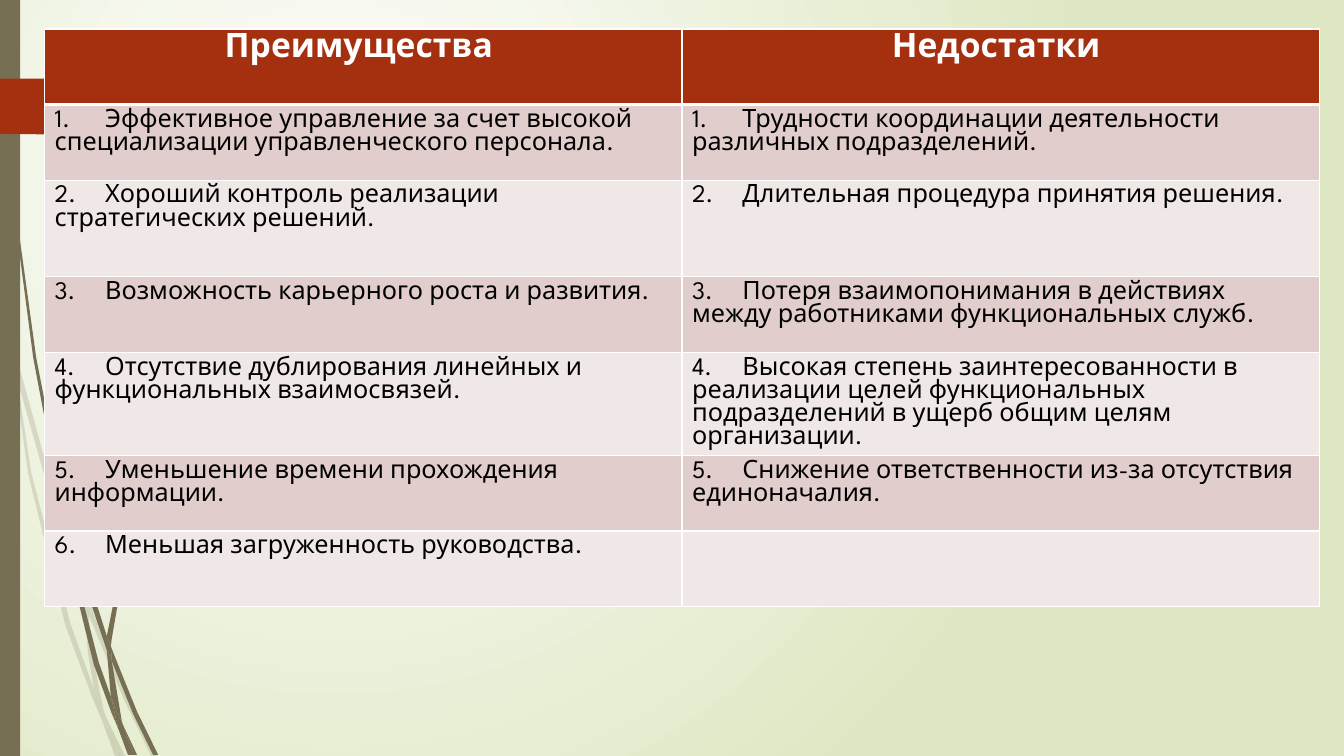
from dataclasses import dataclass

from pptx import Presentation
from pptx.dml.color import RGBColor
from pptx.enum.shapes import MSO_SHAPE
from pptx.enum.text import PP_ALIGN
from pptx.oxml.ns import qn
from pptx.util import Pt
from lxml.etree import SubElement


@dataclass(frozen=True)
class Theme:
    font: str = "League Spartan"
    header_size: float = 24
    body_size: float = 18
    accent: str = "A53010"
    stem: str = "766F54"
    white: str = "FFFFFF"
    black: str = "000000"
    meadow: str = "DFE8C4"
    bands: tuple = ("E1CDCC", "F0E8E7")


# Outline knots in steps of 0.72 pt
STEP = Pt(0.72)
PALE_WISPS = [
    [(11, 350), (9, 322), (0, 282), (0, 299), (10, 344)],
    [(58, 522), (84, 599), (85, 586), (62, 520), (14, 345), (17, 376)],
    [(92, 607), (88, 596), (88, 610), (123, 694), (150, 750), (155, 750),
     (127, 692)],
    [(119, 750), (124, 750), (105, 711)],
    [(93, 683), (70, 619), (31, 469), (17, 376), (11, 350), (28, 470),
     (65, 621), (92, 693), (101, 714), (99, 707)],
    [(84, 599), (87, 646), (93, 683), (96, 692), (105, 711), (103, 706),
     (91, 646), (88, 610), (88, 608)],
    [(88, 584), (110, 462), (160, 349), (229, 245), (268, 198), (290, 175),
     (312, 154), (312, 153), (289, 175), (268, 197), (228, 244), (158, 348),
     (107, 461), (85, 584), (85, 586), (88, 596)],
    [(101, 714), (114, 750), (119, 750)],
    [(88, 608), (88, 610), (88, 596), (85, 586), (84, 599)],
    [(96, 692), (93, 683), (99, 707), (101, 714), (119, 750), (105, 711)],
]
DARK_WISPS = [
    [(7, 110), (17, 233), (33, 355), (56, 477), (57, 481), (55, 457),
     (55, 453), (36, 355), (19, 232), (8, 109), (5, 48), (4, 0), (3, 0),
     (4, 48)],
    [(88, 592), (106, 645), (106, 631), (93, 590), (60, 472), (64, 505)],
    [(113, 649), (110, 641), (111, 656), (132, 708), (152, 749), (157, 749),
     (136, 706)],
    [(110, 691), (98, 657), (72, 556), (64, 505), (57, 477), (68, 557),
     (93, 659), (111, 708), (117, 722), (116, 717)],
    [(60, 472), (58, 453), (54, 349), (58, 245), (63, 193), (70, 141),
     (62, 193), (56, 245), (52, 349), (55, 449)],
    [(133, 749), (136, 749), (122, 719)],
    [(57, 477), (64, 505), (60, 472), (55, 449), (55, 453)],
    [(111, 633), (125, 552), (158, 476), (205, 406), (231, 374), (245, 359),
     (261, 344), (260, 344), (245, 358), (231, 373), (204, 405), (156, 474),
     (122, 551), (106, 631), (110, 641)],
    [(117, 722), (127, 749), (131, 749)],
    [(106, 645), (110, 691), (116, 706), (122, 719), (121, 716), (111, 656),
     (109, 651)],
    [(106, 645), (109, 651), (111, 656), (110, 641), (106, 631)],
    [(116, 706), (110, 691), (116, 717), (117, 722), (130, 749), (133, 749),
     (122, 719)],
]
PAGE_TAG = [(173, 108), (148, 133), (146, 134), (136, 134), (0, 133), (0, 78),
            (136, 78), (146, 78), (148, 79), (173, 104), (174, 106)]

HEADINGS = ("Преимущества ", "Недостатки ")
ADVANTAGES = [
    "Эффективное управление за счет высокой специализации управленческого персонала.",
    "Хороший контроль реализации стратегических решений.",
    "Возможность карьерного роста и развития.",
    "Отсутствие дублирования линейных и функциональных взаимосвязей.",
    "Уменьшение времени прохождения информации.",
    "Меньшая загруженность руководства.",
]
DRAWBACKS = [
    "Трудности координации деятельности различных подразделений.",
    "Длительная процедура принятия решения.",
    "Потеря взаимопонимания в действиях между работниками функциональных служб.",
    "Высокая степень заинтересованности в реализации целей функциональных "
    "подразделений в ущерб общим целям организации.",
    "Снижение ответственности из-за отсутствия единоначалия.",
]
ROW_HEIGHTS = (54, 54, 69, 54, 54, 54, 54)


class SlideBuilder:
    def __init__(self, slide, theme):
        self.slide = slide
        self.theme = theme

    def background(self):
        fill = self.slide.background.fill
        fill.gradient()
        stops = zip(fill.gradient_stops, (0, 1), (self.theme.white, self.theme.meadow))
        for stop, position, color in stops:
            stop.position = position
            stop.color.rgb = RGBColor.from_string(color)
        linear = next(self.slide.element.iter(qn("a:lin")))
        gradient = linear.getparent()
        gradient.remove(linear)
        circle = SubElement(gradient, qn("a:path"), {"path": "circle"})
        SubElement(circle, qn("a:fillToRect"),
                   {"l": "50000", "t": "50000", "r": "100000", "b": "100000"})

    def paint(self, shape, color, opacity=100):
        shape.shadow.inherit = False
        shape.line.fill.background()
        shape.fill.solid()
        shape.fill.fore_color.rgb = RGBColor.from_string(color)
        if opacity < 100:
            tint = shape.fill._xPr.find(qn("a:solidFill"))[0]
            SubElement(tint, qn("a:alpha"), {"val": str(opacity * 1000)})

    def outline(self, knots, color, opacity=100):
        pen = self.slide.shapes.build_freeform(*knots[0], scale=STEP)
        pen.add_line_segments(knots[1:], close=True)
        self.paint(pen.convert_to_shape(), color, opacity)

    def bar(self, left, top, width, height, color):
        bar = self.slide.shapes.add_shape(
            MSO_SHAPE.RECTANGLE, Pt(left), Pt(top), Pt(width), Pt(height))
        self.paint(bar, color)

    def cell(self, cell, text, fill, format_values, align, bottom=1):
        cell.fill.solid()
        cell.fill.fore_color.rgb = RGBColor.from_string(fill)
        cell.text = text
        paragraph = cell.text_frame.paragraphs[0]
        paragraph.alignment = align
        tabs = SubElement(paragraph._p.get_or_add_pPr(), qn("a:tabLst"))
        SubElement(tabs, qn("a:tab"), {"pos": str(Pt(36)), "algn": "l"})
        for font in [paragraph.font] + [run.font for run in paragraph.runs]:
            for name, value in format_values.items():
                setattr(font, name, value)
            font.color.rgb = RGBColor.from_string(
                self.theme.white if format_values["bold"] else self.theme.black)
        # Borders come before the fill
        properties = cell._tc.get_or_add_tcPr()
        sides = (("lnL", 1), ("lnR", 1), ("lnT", 1), ("lnB", bottom))
        for place, (side, width) in enumerate(sides):
            border = SubElement(properties, qn(f"a:{side}"), {"w": str(Pt(width))})
            solid = SubElement(border, qn("a:solidFill"))
            SubElement(solid, qn("a:srgbClr"), {"val": self.theme.white})
            properties.insert(place, border)

    def comparison(self, left, top, column_width, row_heights, headings, columns):
        table = self.slide.shapes.add_table(
            len(row_heights), len(headings), Pt(left), Pt(top),
            Pt(column_width * len(headings)), Pt(sum(row_heights))).table
        for row, height in zip(table.rows, row_heights):
            row.height = Pt(height)
        theme = self.theme
        header = {"name": theme.font, "size": Pt(theme.header_size), "bold": True}
        body = {"name": theme.font, "size": Pt(theme.body_size), "bold": False}
        for column, (heading, points) in enumerate(zip(headings, columns)):
            table.columns[column].width = Pt(column_width)
            self.cell(table.cell(0, column), heading, theme.accent, header,
                      PP_ALIGN.CENTER, bottom=3)
            for row in range(1, len(row_heights)):
                text = f"{row}.\t{points[row - 1]}" if row <= len(points) else ""
                self.cell(table.cell(row, column), text, theme.bands[(row - 1) % 2],
                          body, PP_ALIGN.LEFT, bottom=1)


def main():
    deck = Presentation()
    deck.slide_width, deck.slide_height = Pt(960), Pt(540)
    theme = Theme()
    builder = SlideBuilder(deck.slides.add_slide(deck.slide_layouts[6]), theme)

    # Backdrop
    builder.background()
    for wisps, opacity in ((PALE_WISPS, 20), (DARK_WISPS, 100)):
        for wisp in wisps:
            builder.outline(wisp, theme.stem, opacity)
    builder.bar(0, 0, 14.4, 540, theme.stem)
    builder.outline(PAGE_TAG, theme.accent)

    # Advantages and drawbacks
    builder.comparison(31.9, 20.7, 455.3, ROW_HEIGHTS, HEADINGS,
                       (ADVANTAGES, DRAWBACKS))
    deck.save("out.pptx")


if __name__ == "__main__":
    main()
